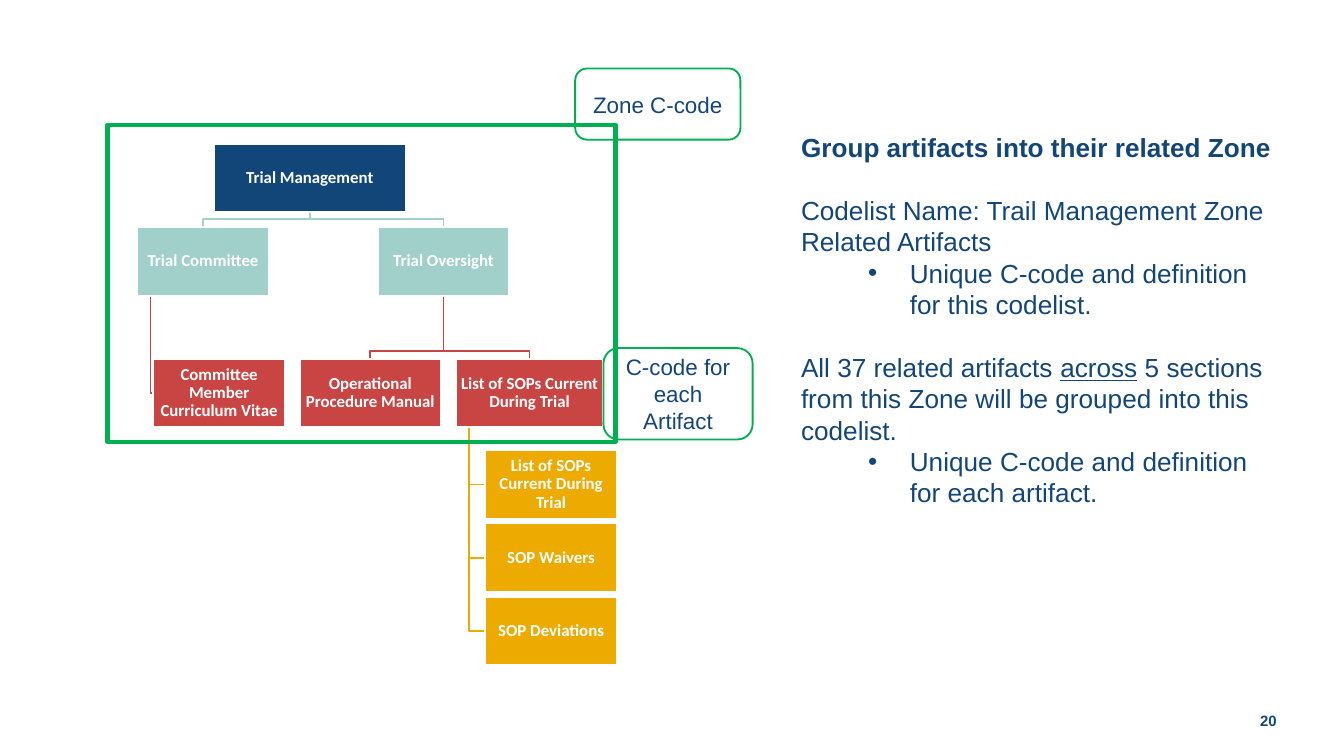
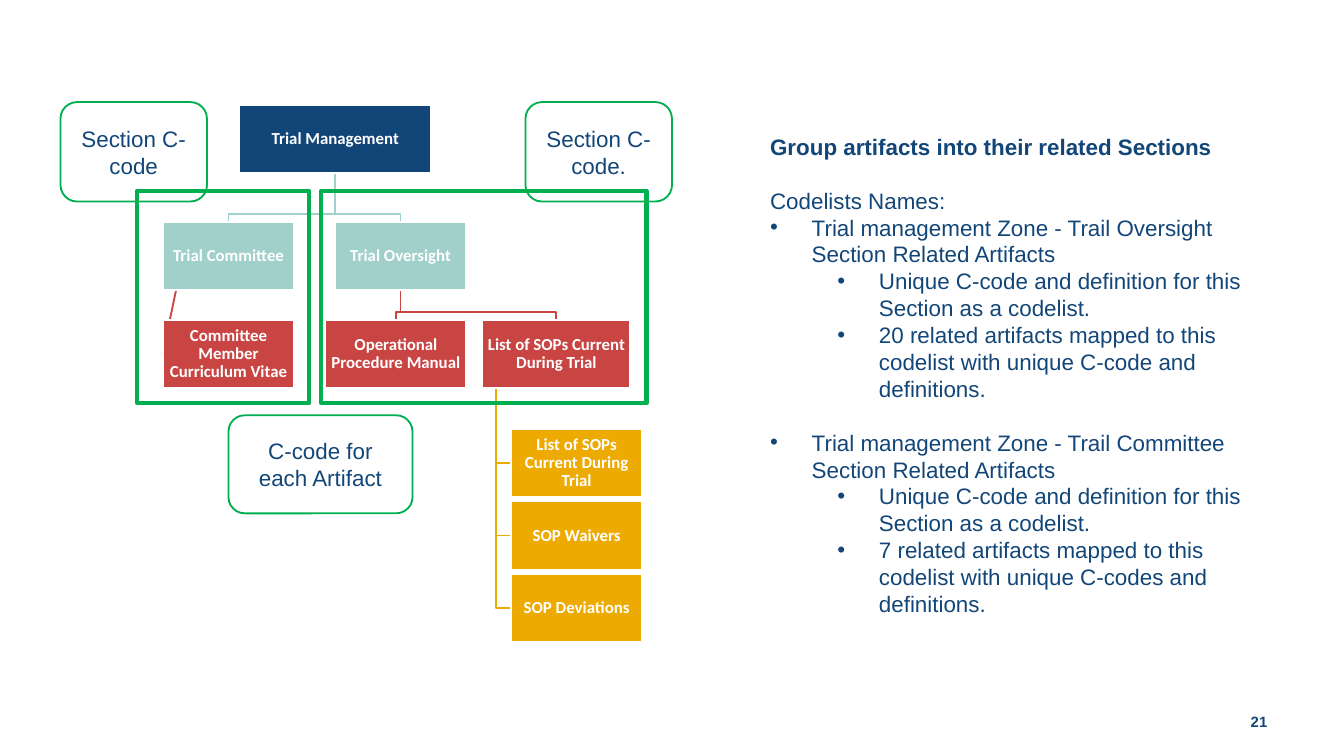
from lxml import etree
from pptx import Presentation
from pptx.dml.color import RGBColor
from pptx.enum.shapes import MSO_CONNECTOR, MSO_SHAPE
from pptx.enum.text import MSO_ANCHOR, MSO_AUTO_SIZE, PP_ALIGN
from pptx.oxml.ns import qn
from pptx.util import Inches, Pt

RECTANGLE, ROUNDED = MSO_SHAPE.RECTANGLE, MSO_SHAPE.ROUNDED_RECTANGLE
STRAIGHT = MSO_CONNECTOR.STRAIGHT
TOP, MIDDLE = MSO_ANCHOR.TOP, MSO_ANCHOR.MIDDLE
LEFT, CENTER, RIGHT = PP_ALIGN.LEFT, PP_ALIGN.CENTER, PP_ALIGN.RIGHT
NO_FIT = MSO_AUTO_SIZE.NONE

COLORS = {"navy": "134678", "teal": "A1D0CA", "red": "C94543",
          "gold": "EDAA00", "green": "00B050", "white": "FFFFFF"}
BOX_HEIGHT = 0.51
BOX_WIDTHS = {"zone": 1.43, "manual": 1.05, "sops": 1.1}
DEFAULT_WIDTH = 0.98
INDENTS = {"plain": 0, "bullet": 0.31, "sub": 0.81}

# Chart boxes: key, wording, fill
BOXES = [
    ("zone", "Trial Management", "navy"),
    ("committee", "Trial Committee", "teal"),
    ("resume", "Committee Member Curriculum Vitae", "red"),
    ("oversight", "Trial Oversight", "teal"),
    ("manual", "Operational Procedure Manual", "red"),
    ("sops", "List of SOPs Current During Trial", "red"),
    ("current", "List of SOPs Current During Trial", "gold"),
    ("waivers", "SOP Waivers", "gold"),
    ("deviations", "SOP Deviations", "gold"),
]
# Links that branch below the parent, and links that hang from its left side
BRANCHES = [("oversight", "sops", "red"), ("oversight", "manual", "red"),
            ("zone", "oversight", "teal"), ("zone", "committee", "teal")]
HANGERS = [("sops", "deviations", "gold"), ("sops", "waivers", "gold"),
           ("sops", "current", "gold"), ("committee", "resume", "red")]

# List items: style, wording (underlined part between underscores), gap before
PAGES = [
    {
        "number": "20", "number_at": (9.17, 5.21),
        "title": "Group artifacts into their related Zone",
        "text_at": (5.86, 0.93, 3.76, 3.23), "size": 14,
        "items": [
            ("plain", "Codelist Name: Trail Management Zone Related Artifacts", False),
            ("sub", "Unique C-code and definition for this codelist.", False),
            ("plain", "All 37 related artifacts _across_ 5 sections from this Zone "
                      "will be grouped into this codelist.", True),
            ("sub", "Unique C-code and definition for each artifact.", False),
        ],
        "places": {"zone": (1.59, 1.07), "committee": (1.02, 1.69),
                   "oversight": (2.81, 1.69), "resume": (1.14, 2.67),
                   "manual": (2.23, 2.67), "sops": (3.39, 2.67),
                   "current": (3.61, 3.35), "deviations": (3.61, 4.44)},
        "frames": [(0.8, 0.93, 3.78, 2.36)],
        "callouts": [("Zone C-code", (4.28, 0.51, 1.23, 0.53)),
                     ("C-code for each Artifact", (4.49, 2.59, 1.11, 0.68))],
    },
    {
        "number": "21", "number_at": (9.1, 5.22),
        "title": "Group artifacts into their related Sections",
        "text_at": (5.63, 0.94, 3.98, 3.94), "size": 12,
        "items": [
            ("plain", "Codelists Names:", False),
            ("bullet", "Trial management Zone - Trail Oversight Section "
                       "Related Artifacts", False),
            ("sub", "Unique C-code and definition for this Section as a codelist.", False),
            ("sub", "20 related artifacts mapped to this codelist with unique "
                    "C-code and definitions.", False),
            ("bullet", "Trial management Zone - Trail Committee Section "
                       "Related Artifacts", True),
            ("sub", "Unique C-code and definition for this Section as a codelist.", False),
            ("sub", "7 related artifacts mapped to this codelist with unique "
                    "C-codes and definitions.", False),
        ],
        "places": {"zone": (1.78, 0.78), "committee": (1.21, 1.65),
                   "oversight": (2.49, 1.65), "resume": (1.21, 2.38),
                   "manual": (2.42, 2.38), "sops": (3.59, 2.38),
                   "current": (3.8, 3.19), "deviations": (3.8, 4.27)},
        "frames": [(1.02, 1.42, 1.28, 1.58), (2.39, 1.42, 2.42, 1.58)],
        "callouts": [("Section C-code.", (3.91, 0.76, 1.09, 0.74)),
                     ("C-code for each Artifact", (1.7, 3.09, 1.37, 0.73)),
                     ("Section C-code", (0.45, 0.76, 1.09, 0.74))],
    },
]


def add_box(page, kind, place, line, weight, fill=None, text="", font="Arial", size=12):
    """Add an outlined shape, filled and labelled where asked."""
    box = page.shapes.add_shape(kind, *[Inches(length) for length in place])
    box.shadow.inherit = False
    box.line.color.rgb = RGBColor.from_string(COLORS[line])
    box.line.width = Pt(weight)
    if fill:
        box.fill.solid()
        box.fill.fore_color.rgb = RGBColor.from_string(COLORS[fill])
    else:
        box.fill.background()
    if text:
        frame = box.text_frame
        frame.text = text
        frame.word_wrap = True
        frame.vertical_anchor = MIDDLE
        para = frame.paragraphs[0]
        para.alignment = CENTER
        style_font(para.runs[0].font, size, "white" if fill else "navy", bool(fill), font)
    return box


def style_font(font, size, color="navy", bold=False, name="Arial"):
    font.name = name
    font.size = Pt(size)
    font.bold = bold
    font.color.rgb = RGBColor.from_string(COLORS[color])


# Widescreen deck, 16 by 9
deck = Presentation()
deck.slide_width = Inches(10)
deck.slide_height = deck.slide_width * 9 // 16

for content in PAGES:
    page = deck.slides.add_slide(deck.slide_layouts[1])
    title, body = page.shapes.title, page.placeholders[1]
    size = content["size"]
    line_height = 1.2 * size / 72

    # Heading and list
    left, top, width, height = content["text_at"]
    title.text_frame.text = content["title"]
    list_offset = 2 * line_height
    for holder, offset, tall in ((title, 0, line_height + 0.1),
                                 (body, list_offset, height - list_offset)):
        holder.left, holder.top = Inches(left), Inches(top + offset)
        holder.width, holder.height = Inches(width), Inches(tall)
        holder.text_frame.word_wrap = True
        holder.text_frame.auto_size = NO_FIT
        holder.text_frame.vertical_anchor = TOP
    heading = title.text_frame.paragraphs[0]
    heading.alignment = LEFT
    heading.line_spacing = Pt(1.2 * size)
    style_font(heading.runs[0].font, size, bold=True)

    for index, (style, wording, gap) in enumerate(content["items"]):
        frame = body.text_frame
        para = frame.paragraphs[0] if index == 0 else frame.add_paragraph()
        para.level = 1 if style == "sub" else 0
        properties = para._p.get_or_add_pPr()
        properties.set("marL", str(Inches(INDENTS[style])))
        if style == "plain":
            properties.set("indent", "0")
            etree.SubElement(properties, qn("a:buNone"))
        else:
            properties.set("indent", str(-Inches(0.31)))
            etree.SubElement(properties, qn("a:buFont"), typeface="Arial")
            etree.SubElement(properties, qn("a:buChar"), char="•")
        para.alignment = LEFT
        para.line_spacing = Pt(1.2 * size)
        para.space_before = Pt(1.2 * size if gap else 0)
        for position, part in enumerate(wording.split("_")):
            span = para.add_run()
            span.text = part
            style_font(span.font, size)
            if position == 1:
                span.font.underline = True

    # Chart geometry: the middle gold box sits halfway between its neighbours
    places = dict(content["places"])
    sop_left, sop_top = places["current"]
    places["waivers"] = (sop_left, (sop_top + places["deviations"][1]) / 2)

    # Links
    routes = []
    for parent, child, color in HANGERS:
        (x, y), (child_x, child_y) = places[parent], places[child]
        stem, middle = x + 0.1, child_y + BOX_HEIGHT / 2
        route = [(stem, y + BOX_HEIGHT), (child_x, middle)]
        if child_x > stem:
            route.insert(1, (stem, middle))
        routes.append((route, color))
    for parent, child, color in BRANCHES:
        (x, y), (child_x, child_y) = places[parent], places[child]
        x += BOX_WIDTHS.get(parent, DEFAULT_WIDTH) / 2
        child_x += BOX_WIDTHS.get(child, DEFAULT_WIDTH) / 2
        bend = child_y - 0.06
        routes.append(([(x, y + BOX_HEIGHT), (x, bend), (child_x, bend),
                        (child_x, child_y)], color))
    for route, color in routes:
        points = [(Inches(x), Inches(y)) for x, y in route]
        if len(points) == 2:
            link = page.shapes.add_connector(STRAIGHT, *points[0], *points[1])
            etree.SubElement(link._element.spPr, qn("a:effectLst"))
        else:
            builder = page.shapes.build_freeform(*points[0])
            builder.add_line_segments(points[1:], close=False)
            link = builder.convert_to_shape()
            link.fill.background()
            link.shadow.inherit = False
        link.line.color.rgb = RGBColor.from_string(COLORS[color])
        link.line.width = Pt(1)

    # Boxes
    for key, wording, fill in BOXES:
        place = (*places[key], BOX_WIDTHS.get(key, DEFAULT_WIDTH), BOX_HEIGHT)
        box = add_box(page, RECTANGLE, place, "white", 1, fill, wording, "Calibri", 9)
        frame = box.text_frame
        frame.margin_left = frame.margin_right = Inches(0.01)
        frame.margin_top = frame.margin_bottom = Inches(0.01)
        frame.paragraphs[0].line_spacing = 0.9

    # Green frames and callouts
    for place in content["frames"]:
        add_box(page, RECTANGLE, place, "green", 2.25)
    for wording, place in content["callouts"]:
        add_box(page, ROUNDED, place, "green", 1, text=wording)

    # Page number
    number_left, number_top = content["number_at"]
    number = page.shapes.add_textbox(Inches(number_left), Inches(number_top),
                                     Inches(0.33), Inches(0.3))
    frame = number.text_frame
    frame.text = content["number"]
    frame.word_wrap = True
    frame.vertical_anchor = MIDDLE
    frame.margin_left = frame.margin_right = frame.margin_top = frame.margin_bottom = 0
    frame.paragraphs[0].alignment = RIGHT
    style_font(frame.paragraphs[0].runs[0].font, 8, bold=True)

deck.save("out.pptx")
